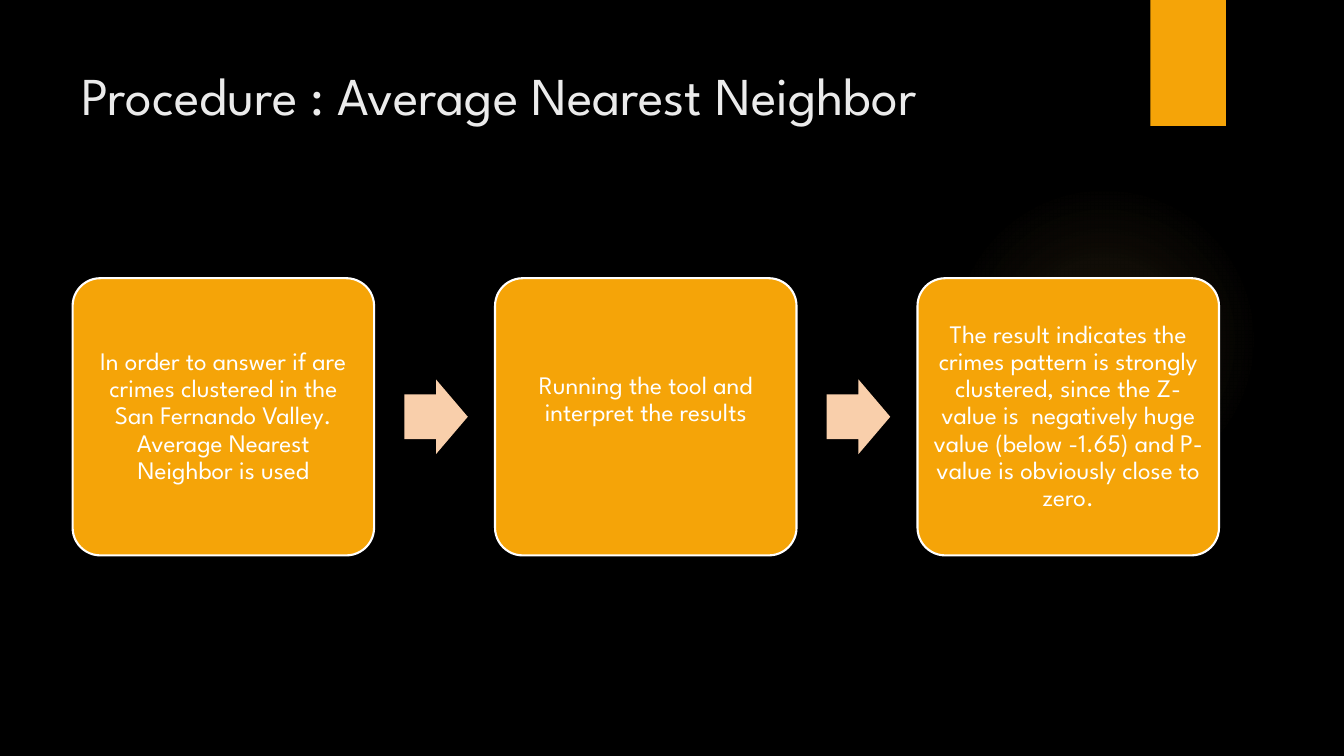
from lxml.etree import SubElement
from pptx import Presentation
from pptx.dml.color import RGBColor
from pptx.enum.shapes import MSO_SHAPE
from pptx.enum.text import MSO_ANCHOR, PP_ALIGN
from pptx.oxml.ns import qn
from pptx.util import Inches, Pt

COLORS = {
    "background": "000000",
    "accent": "F5A408",
    "glow": "FAC96A",
    "arrow": "F9CFAB",
    "title": "EBEBEB",
    "white": "FFFFFF",
}
FONT = "League Spartan"
STEPS = [
    ("In order to answer if are crimes clustered in the San Fernando Valley. "
     "Average Nearest Neighbor is used", 0),
    ("Running the tool and interpret the results", 0.34),
    ("The result indicates the crimes pattern is strongly clustered, since the "
     "Z-value is  negatively huge value (below -1.65) and P-value is obviously "
     "close to zero.", 0),
]


def color(name):
    """Return the named colour."""
    return RGBColor.from_string(COLORS[name])


def add_block(slide, kind, left, top, width, height, fill):
    """Add a flat preset shape without an outline."""
    shape = slide.shapes.add_shape(
        kind, Inches(left), Inches(top), Inches(width), Inches(height))
    shape.shadow.inherit = False
    shape.fill.solid()
    shape.fill.fore_color.rgb = color(fill)
    shape.line.fill.background()
    return shape


def style_text(paragraph, text, size, text_color):
    """Fill a paragraph and set its font."""
    paragraph.text = text
    paragraph.font.name = FONT
    paragraph.font.size = Pt(size)
    paragraph.font.color.rgb = color(text_color)


def add_glow(slide, left, top, size):
    """Add a faint round glow that fades towards its edge."""
    shape = add_block(slide, MSO_SHAPE.OVAL, left, top, size, size, "glow")
    shape.fill.gradient()
    gradient = shape._element.spPr.find(qn("a:gradFill"))
    for child in list(gradient):
        gradient.remove(child)
    stops = SubElement(gradient, qn("a:gsLst"))
    for position, opacity in ((0, 7), (36, 6), (69, 0)):
        stop = SubElement(stops, qn("a:gs"), pos=str(position * 1000))
        stop_color = SubElement(stop, qn("a:srgbClr"), val=COLORS["glow"])
        SubElement(stop_color, qn("a:alpha"), val=str(opacity * 1000))
    circle = SubElement(gradient, qn("a:path"), path="circle")
    SubElement(circle, qn("a:fillToRect"),
               {side: "50000" for side in "ltrb"})


def add_title(slide, left, top, width, height):
    """Add the slide title."""
    box = slide.shapes.add_textbox(
        Inches(left), Inches(top), Inches(width), Inches(height))
    box.text_frame.word_wrap = True
    style_text(box.text_frame.paragraphs[0],
               "Procedure : Average Nearest Neighbor", 38, "title")


def add_step(slide, left, top, width, height, text, lift):
    """Add one rounded step box, with room for lift below its text."""
    shape = add_block(slide, MSO_SHAPE.ROUNDED_RECTANGLE,
                      left, top, width, height, "accent")
    shape.adjustments[0] = 0.1
    shape.line.color.rgb = color("white")
    shape.line.width = Pt(1.5)
    frame = shape.text_frame
    frame.word_wrap = True
    frame.vertical_anchor = MSO_ANCHOR.MIDDLE
    frame.margin_left = frame.margin_right = frame.margin_top = Inches(0.07)
    frame.margin_bottom = Inches(0.07 + lift)
    paragraph = frame.paragraphs[0]
    paragraph.alignment = PP_ALIGN.CENTER
    paragraph.line_spacing = 0.9
    style_text(paragraph, text, 18, "white")


def add_process(slide, left, top, width, height):
    """Add the row of steps with an arrow in each gap."""
    step_width, arrow_width, arrow_height = 2.99, 0.63, 0.74
    pitch = (width - step_width) / (len(STEPS) - 1)
    for index, (text, lift) in enumerate(STEPS):
        step_left = left + index * pitch
        if index:
            arrow = add_block(
                slide, MSO_SHAPE.RIGHT_ARROW, step_left - 0.9,
                top + (height - arrow_height) / 2,
                arrow_width, arrow_height, "arrow")
            arrow.adjustments[0] = 0.6
            arrow.adjustments[1] = 0.5
        add_step(slide, step_left, top, step_width, height, text, lift)


def main():
    """Build and save the slide."""
    presentation = Presentation()
    presentation.slide_width = Inches(13.33)
    presentation.slide_height = Inches(7.5)
    slide = presentation.slides.add_slide(presentation.slide_layouts[6])
    slide.background.fill.solid()
    slide.background.fill.fore_color.rgb = color("background")
    add_glow(slide, 9.41, 1.83, 3.08)
    add_block(slide, MSO_SHAPE.RECTANGLE, 11.41, 0, 0.75, 1.25, "accent")
    add_title(slide, 0.71, 0.57, 10.71, 1.53)
    add_process(slide, 0.72, 2.76, 11.37, 2.75)
    presentation.save("out.pptx")


if __name__ == "__main__":
    main()
